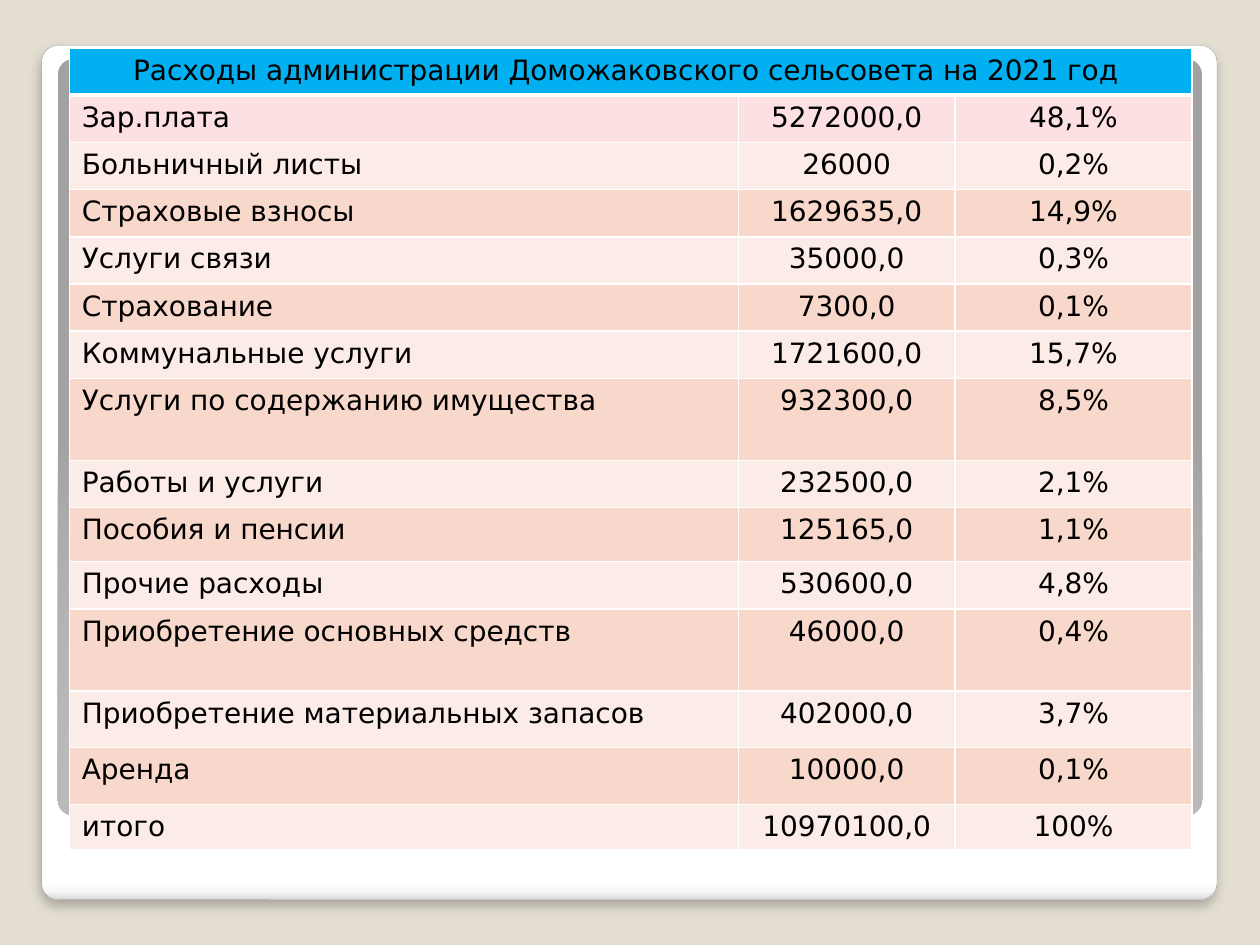
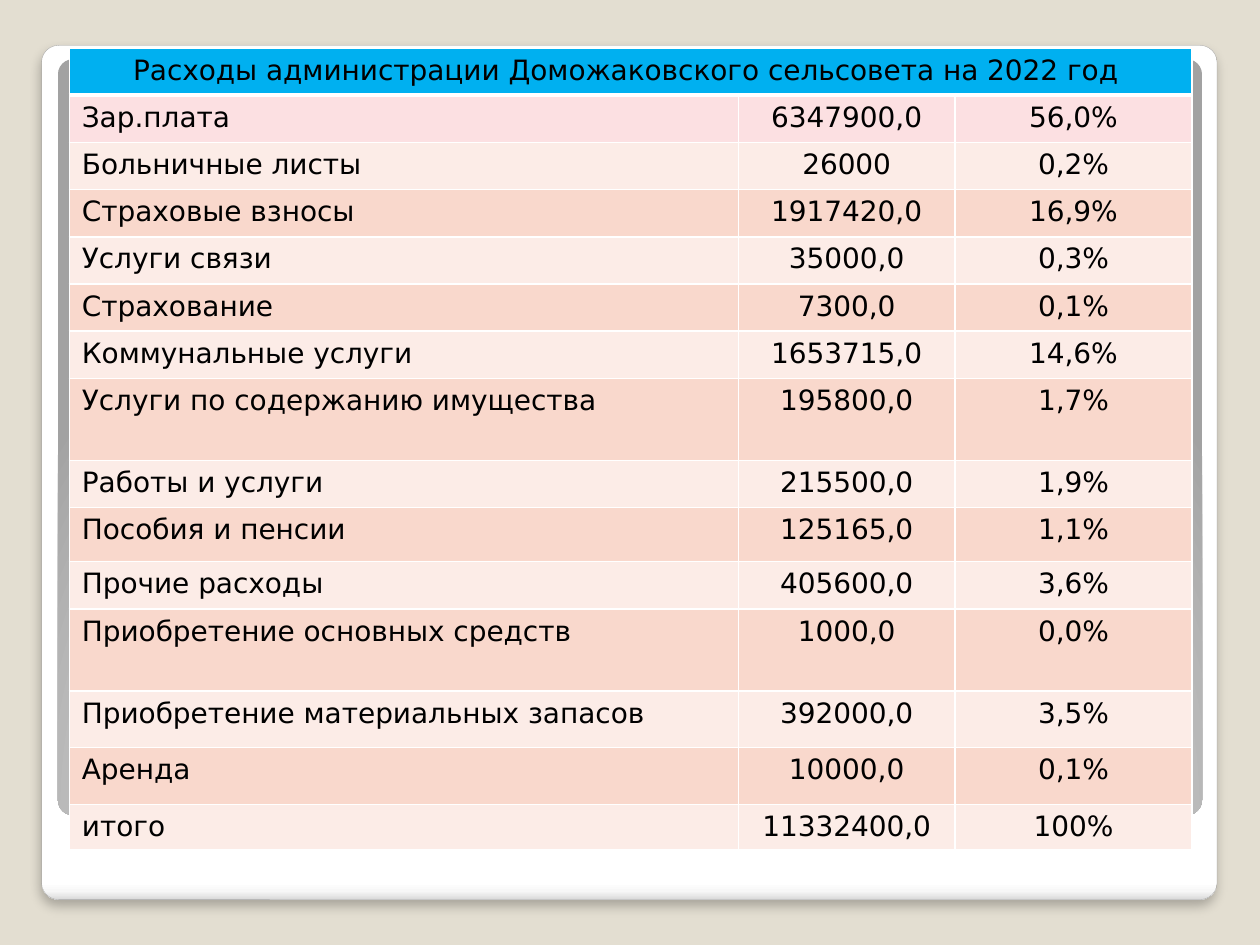
from lxml import etree
from pptx import Presentation
from pptx.dml.color import RGBColor
from pptx.enum.shapes import MSO_SHAPE
from pptx.enum.text import PP_ALIGN
from pptx.oxml.ns import qn
from pptx.util import Inches, Pt

ROUND_RECT = MSO_SHAPE.ROUNDED_RECTANGLE
LEFT, CENTER = PP_ALIGN.LEFT, PP_ALIGN.CENTER
FONT = "DejaVu Sans"
COLORS = {
    "background": "E3DED1", "panel_line": "A4A4A4", "text": "000000",
    "border": "FFFFFF", "header": "00B0F0", "first_row": "FCE0E2",
    "light": "FCECE7", "dark": "F9D8CC", "shadow": "000000",
}
FRAME_STOPS = [(0, "FFFFFF"), (98, "FFFFFF"), (99, "F7F7F7"), (100, "DADADA")]
INSET_STOPS = [(0, "FFFFFF"), (55, "E1E1E1"), (100, "A2A2A2")]

COL_WIDTHS = [5.31, 1.72, 1.88]
LINE = 3 / 8
ROW_HEIGHTS = [LINE] * 7 + [0.65, LINE, 0.43, LINE, 0.65, 0.45, 0.45, 0.36]

# Label, then amount and share for each year
EXPENSES = [
    ("Зар.плата", ("5272000,0", "48,1%"), ("6347900,0", "56,0%")),
    ("Больничные листы", ("26000", "0,2%"), ("26000", "0,2%")),
    ("Страховые взносы", ("1629635,0", "14,9%"), ("1917420,0", "16,9%")),
    ("Услуги связи", ("35000,0", "0,3%"), ("35000,0", "0,3%")),
    ("Страхование", ("7300,0", "0,1%"), ("7300,0", "0,1%")),
    ("Коммунальные услуги", ("1721600,0", "15,7%"), ("1653715,0", "14,6%")),
    ("Услуги по содержанию имущества", ("932300,0", "8,5%"), ("195800,0", "1,7%")),
    ("Работы и услуги", ("232500,0", "2,1%"), ("215500,0", "1,9%")),
    ("Пособия и пенсии", ("125165,0", "1,1%"), ("125165,0", "1,1%")),
    ("Прочие расходы", ("530600,0", "4,8%"), ("405600,0", "3,6%")),
    ("Приобретение основных средств", ("46000,0", "0,4%"), ("1000,0", "0,0%")),
    ("Приобретение материальных запасов", ("402000,0", "3,7%"), ("392000,0", "3,5%")),
    ("Аренда", ("10000,0", "0,1%"), ("10000,0", "0,1%")),
    ("итого", ("10970100,0", "100%"), ("11332400,0", "100%")),
]
# Wording that differs in one year only
LABELS_BY_YEAR = {2021: {"Больничные листы": "Больничный листы"}, 2022: {}}


def add_xml(parent, tag, **attrs):
    """Append a DrawingML element and return it."""
    return etree.SubElement(parent, qn(tag), {k: str(v) for k, v in attrs.items()})


def add_panel(s, left, top, width, height, stops):
    """Add a rounded panel; return it with its gradient, still without direction."""
    sp = s.shapes.add_shape(ROUND_RECT, Inches(left), Inches(top),
                            Inches(width), Inches(height))
    sp.adjustments[0] = 0.02
    sp.shadow.inherit = False
    sp.line.fill.background()
    sp.fill.gradient()
    grad = sp._element.spPr.find(qn("a:gradFill"))
    for child in list(grad):
        grad.remove(child)
    stop_list = add_xml(grad, "a:gsLst")
    for pos, color in stops:
        stop = add_xml(stop_list, "a:gs", pos=pos * 1000)
        add_xml(stop, "a:srgbClr", val=color)
    return sp, grad


prs = Presentation()
prs.slide_width, prs.slide_height = Inches(10), Inches(7.5)
fill = prs.slide_master.background.fill
fill.solid()
fill.fore_color.rgb = RGBColor.from_string(COLORS["background"])

for year_index, (year, year_labels) in enumerate(LABELS_BY_YEAR.items()):
    s = prs.slides.add_slide(prs.slide_layouts[6])

    frame, grad = add_panel(s, 0.33, 0.36, 9.33, 6.78, FRAME_STOPS)
    add_xml(grad, "a:lin", ang=90 * 60000, scaled=0)
    frame.line.color.rgb = RGBColor.from_string(COLORS["panel_line"])
    frame.line.width = Pt(0.16)
    effects = frame._element.spPr.find(qn("a:effectLst"))
    shadow = add_xml(effects, "a:outerShdw", blurRad=Pt(6), dist=Pt(4),
                     dir=90 * 60000, algn="t", rotWithShape=0)
    color = add_xml(shadow, "a:srgbClr", val=COLORS["shadow"])
    add_xml(color, "a:alpha", val=25000)

    inset, grad = add_panel(s, 0.46, 0.47, 9.08, 6, INSET_STOPS)
    circle = add_xml(grad, "a:path", path="circle")
    add_xml(circle, "a:fillToRect", l=50000, t=175000, r=50000, b=-75000)

    title = f"Расходы администрации Доможаковского сельсовета на {year} год "
    rows = [(title, "", "")]
    for label, *by_year in EXPENSES:
        rows.append((year_labels.get(label, label), *by_year[year_index]))

    table = s.shapes.add_table(len(rows), len(COL_WIDTHS), Inches(0.55), Inches(0.38),
                               Inches(sum(COL_WIDTHS)), Inches(sum(ROW_HEIGHTS))).table
    table.first_row = table.horz_banding = False
    for column, width in zip(table.columns, COL_WIDTHS):
        column.width = Inches(width)
    for row, height in zip(table.rows, ROW_HEIGHTS):
        row.height = Inches(height)
    table.cell(0, 0).merge(table.cell(0, 2))

    for i, texts in enumerate(rows):
        band = "dark" if i % 2 else "light"
        row_color = COLORS[{0: "header", 1: "first_row"}.get(i, band)]
        for j, text in enumerate(texts):
            cell = table.cell(i, j)
            tc_pr = cell._tc.get_or_add_tcPr()
            for side in "LRTB":
                under_header = (i, side) in ((0, "B"), (1, "T"))
                ln = add_xml(tc_pr, f"a:ln{side}", w=Pt(3 if under_header else 1))
                add_xml(add_xml(ln, "a:solidFill"), "a:srgbClr", val=COLORS["border"])
            cell.fill.solid()
            cell.fill.fore_color.rgb = RGBColor.from_string(row_color)
            p = cell.text_frame.paragraphs[0]
            p.text = text
            p.alignment = LEFT if i and j == 0 else CENTER
            p.font.name, p.font.size = FONT, Pt(16)
            p.font.color.rgb = RGBColor.from_string(COLORS["text"])

prs.save("out.pptx")
